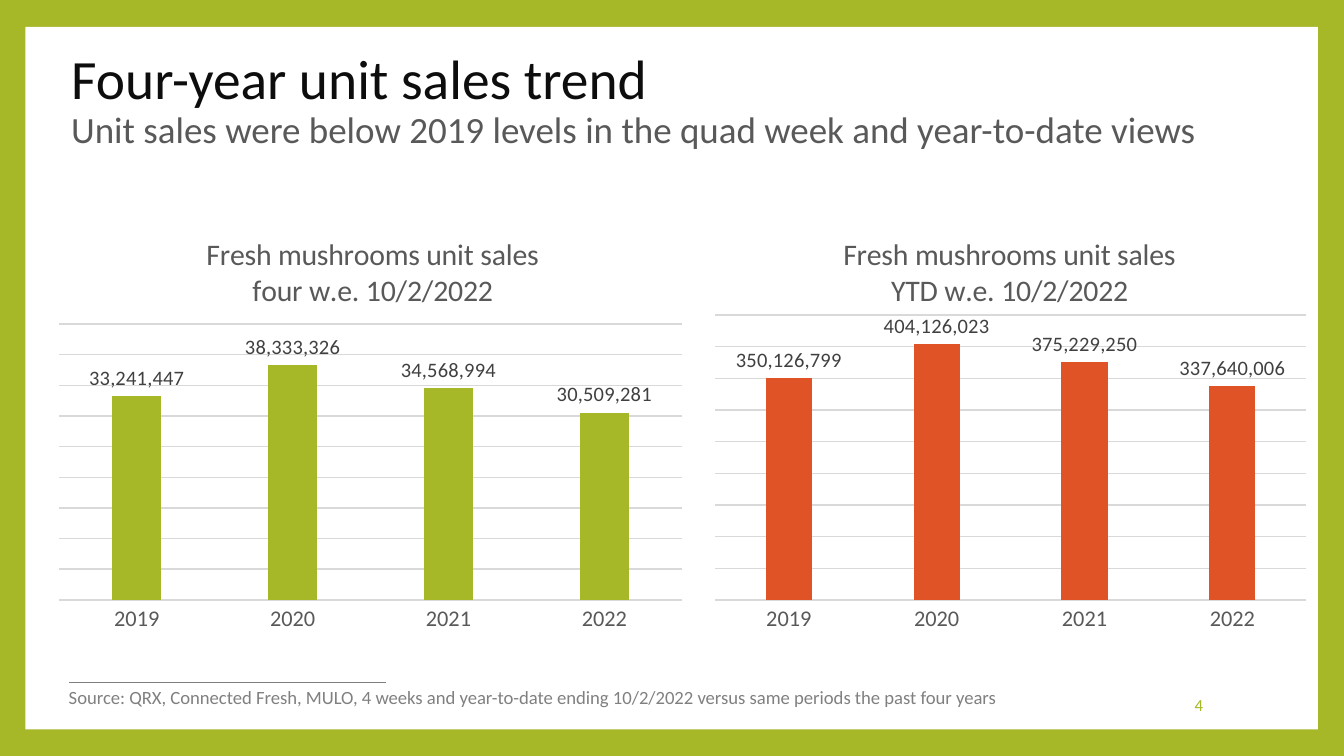
import pptx
import pptx.chart.data
import pptx.dml.color
import pptx.enum.chart
import pptx.enum.shapes
import pptx.enum.text
import pptx.oxml
import pptx.oxml.ns
import pptx.util
from pptx.dml.color import RGBColor
from pptx.util import Cm, Pt

GREEN = RGBColor(0xA6, 0xB7, 0x27)
ORANGE = RGBColor(0xDF, 0x53, 0x27)
WHITE = RGBColor(0xFF, 0xFF, 0xFF)
BLACK = RGBColor(0x0D, 0x0D, 0x0D)
DARK_GRAY = RGBColor(0x40, 0x40, 0x40)
TEXT_GRAY = RGBColor(0x59, 0x59, 0x59)
SOURCE_GRAY = RGBColor(0x80, 0x80, 0x80)
GRID_GRAY = RGBColor(0xD9, 0xD9, 0xD9)

FONT = "Calibri"
YEARS = ["2019", "2020", "2021", "2022"]
NUMBER_FORMAT = "#,##0"


def style_font(font, size, color):
    font.name = FONT
    font.size = Pt(size)
    font.bold = False
    font.color.rgb = color


def add_run(paragraph, text, size, color):
    run = paragraph.add_run()
    run.text = text
    style_font(run.font, size, color)


def add_panel(slide):
    """White panel behind everything, leaving the background as a border."""
    panel = slide.shapes.add_shape(
        pptx.enum.shapes.MSO_SHAPE.RECTANGLE, Cm(0.48), Cm(0.51), Cm(24.43), Cm(13.28))
    panel.shadow.inherit = False
    panel.fill.solid()
    panel.fill.fore_color.rgb = WHITE
    panel.line.fill.background()
    # Send to back, behind the title placeholder
    slide.shapes.title.element.addprevious(panel.element)


def add_rule(slide, left, top, width):
    rule = slide.shapes.add_connector(
        pptx.enum.shapes.MSO_CONNECTOR.STRAIGHT, left, top, left + width, top)
    rule.line.color.rgb = SOURCE_GRAY
    rule.line.width = Pt(0.79)
    properties = rule.element.spPr
    properties.append(properties.makeelement(pptx.oxml.ns.qn("a:effectLst"), {}))


def set_title(slide, heading, subheading):
    title = slide.shapes.title
    title.left, title.top, title.width, title.height = Cm(1.09), Cm(0.91), Cm(23.01), Cm(2.01)
    frame = title.text_frame
    frame.word_wrap = True
    frame.auto_size = pptx.enum.text.MSO_AUTO_SIZE.NONE
    frame.vertical_anchor = pptx.enum.text.MSO_ANCHOR.MIDDLE
    paragraph = frame.paragraphs[0]
    paragraph.alignment = pptx.enum.text.PP_ALIGN.LEFT
    paragraph.line_spacing = 0.9
    add_run(paragraph, heading, 29.7, BLACK)
    paragraph.add_line_break()
    add_run(paragraph, subheading, 19.8, TEXT_GRAY)


def add_text(slide, box, text, size, color, alignment, wrap=True):
    frame = slide.shapes.add_textbox(*box).text_frame
    frame.word_wrap = wrap
    frame.vertical_anchor = pptx.enum.text.MSO_ANCHOR.MIDDLE
    paragraph = frame.paragraphs[0]
    paragraph.alignment = alignment
    add_run(paragraph, text, size, color)


def place(following, **fractions):
    """Put a manual layout, in fractions of the chart, before an element."""
    parent = following.getparent()
    for old_layout in parent.findall(pptx.oxml.ns.qn("c:layout")):
        parent.remove(old_layout)
    target = '<c:layoutTarget val="inner"/>' if "w" in fractions else ""
    modes = "".join(f'<c:{key}Mode val="edge"/>' for key in ("x", "y"))
    values = "".join(f'<c:{key} val="{value}"/>' for key, value in fractions.items())
    following.addprevious(pptx.oxml.parse_xml(
        f'<c:layout {pptx.oxml.ns.nsdecls("c")}><c:manualLayout>'
        f"{target}{modes}{values}</c:manualLayout></c:layout>"))


def add_sales_chart(slide, left, width, title_lines, title_x, plot_y, plot_height,
                    values, step, color):
    data = pptx.chart.data.CategoryChartData(number_format=NUMBER_FORMAT)
    data.categories = YEARS
    data.add_series("Unit sales", values)
    chart = slide.shapes.add_chart(
        pptx.enum.chart.XL_CHART_TYPE.COLUMN_CLUSTERED,
        left, Cm(3.94), width, Cm(8.41), data).chart
    chart.has_legend = False
    style_font(chart.font, 10, TEXT_GRAY)

    # Title
    frame = chart.chart_title.text_frame
    for index, line in enumerate(title_lines):
        paragraph = frame.add_paragraph() if index else frame.paragraphs[0]
        add_run(paragraph, line, 16, TEXT_GRAY)
    chart.chart_title.include_in_layout = False
    title_element = chart.chart_title._element
    place(title_element.find(pptx.oxml.ns.qn("c:overlay")), x=title_x, y=0.05)

    # Columns and their labels
    plot = chart.plots[0]
    plot.gap_width = 219
    plot.overlap = -27
    plot.vary_by_categories = False
    series = plot.series[0]
    series.format.fill.solid()
    series.format.fill.fore_color.rgb = color
    labels = series.data_labels
    labels.show_value = True
    labels.position = pptx.enum.chart.XL_LABEL_POSITION.OUTSIDE_END
    labels.number_format = NUMBER_FORMAT
    labels.number_format_is_linked = False
    style_font(labels.font, 11, DARK_GRAY)
    plot_area = plot._element.getparent()
    place(plot_area.find(pptx.oxml.ns.qn("c:barChart")),
          x=0, y=plot_y, w=1, h=plot_height)

    # Axes
    years = chart.category_axis
    years.major_tick_mark = pptx.enum.chart.XL_TICK_MARK.NONE
    style_font(years.tick_labels.font, 12, TEXT_GRAY)
    sales = chart.value_axis
    sales.visible = False
    sales.minimum_scale = 0
    sales.maximum_scale = 9 * step
    sales.major_unit = step
    sales.has_major_gridlines = True
    for line in (years.format.line, sales.major_gridlines.format.line):
        line.color.rgb = GRID_GRAY
        line.width = Pt(0.75)


def main():
    presentation = pptx.Presentation()
    presentation.slide_width = Cm(25.4)
    presentation.slide_height = Cm(14.29)
    slide = presentation.slides.add_slide(presentation.slide_layouts[5])
    slide.background.fill.solid()
    slide.background.fill.fore_color.rgb = GREEN

    # Frame and title
    add_panel(slide)
    set_title(slide, "Four-year unit sales trend",
              "Unit sales were below 2019 levels in the quad week and year-to-date views")

    # Footer
    add_rule(slide, Cm(1.3), Cm(12.9), Cm(6))
    add_text(slide, (Cm(19.43), Cm(12.95), Cm(3.56), Cm(0.76)), "4", 9, GREEN,
             pptx.enum.text.PP_ALIGN.RIGHT)
    add_text(slide, (Cm(1.05), Cm(12.83), Cm(18.14), Cm(0.69)),
             "Source: QRX, Connected Fresh, MULO, 4 weeks and year-to-date ending "
             "10/2/2022 versus same periods the past four years",
             10, SOURCE_GRAY, pptx.enum.text.PP_ALIGN.LEFT, wrap=False)

    # Charts
    add_sales_chart(slide, Cm(1.1), Cm(11.81),
                    ["Fresh mushrooms unit sales", "four w.e. 10/2/2022"],
                    0.23, 0.26, 0.62,
                    [33241447, 38333326, 34568994, 30509281], 5_000_000, GREEN)
    add_sales_chart(slide, Cm(13.5), Cm(11.2),
                    ["Fresh mushrooms unit sales", "YTD w.e. 10/2/2022"],
                    0.21, 0.24, 0.64,
                    [350126799, 404126023, 375229250, 337640006], 50_000_000, ORANGE)

    presentation.save("out.pptx")


if __name__ == "__main__":
    main()
